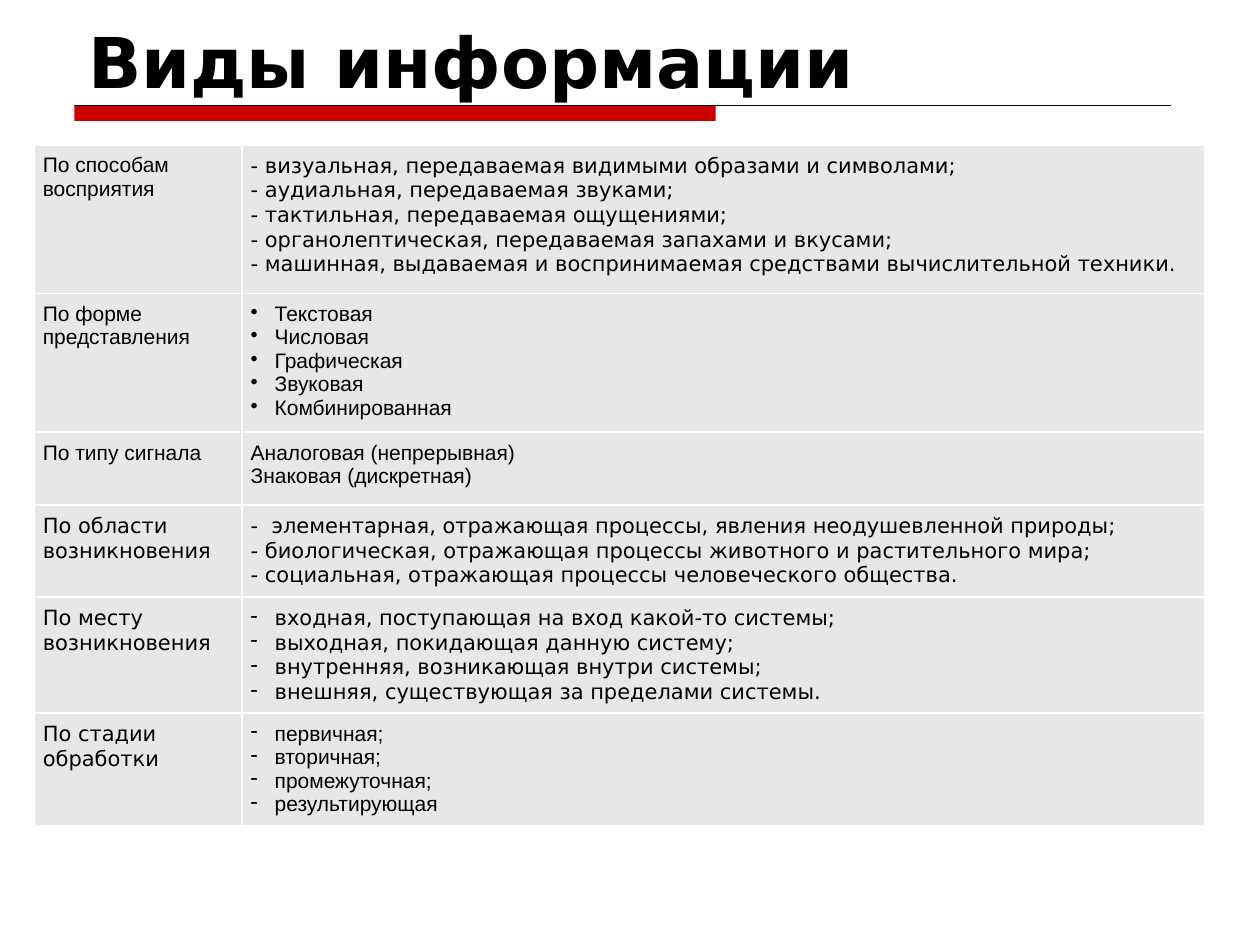
from dataclasses import dataclass

from lxml import etree
from pptx import Presentation
from pptx.dml.color import RGBColor
from pptx.enum.shapes import MSO_CONNECTOR, MSO_SHAPE
from pptx.enum.text import MSO_ANCHOR, MSO_AUTO_SIZE, PP_ALIGN
from pptx.oxml.ns import qn
from pptx.util import Emu, Inches, Pt

RECT = MSO_SHAPE.RECTANGLE
STRAIGHT = MSO_CONNECTOR.STRAIGHT
LEFT = PP_ALIGN.LEFT
TOP, BOTTOM = MSO_ANCHOR.TOP, MSO_ANCHOR.BOTTOM
NO_FIT = MSO_AUTO_SIZE.NONE

COLORS = {"text": "000000", "accent": "CC0000", "cell": "E7E7E7", "border": "FFFFFF"}
SANS, WIDE = "Arial", "DejaVu Sans"
COLS, ROWS = 100, 75  # slide grid
INSET, HANG = Inches(0.07), Inches(0.19)


@dataclass
class Category:
    name: str
    name_font: str
    items: list[str]
    item_font: str
    rows: float  # height in grid rows
    bullet: str = ""


CATEGORIES = [
    Category("По способам восприятия", SANS, [
        "- визуальная, передаваемая видимыми образами и символами;",
        "- аудиальная, передаваемая звуками;",
        "- тактильная, передаваемая ощущениями;",
        "- органолептическая, передаваемая запахами и вкусами;",
        "- машинная, выдаваемая и воспринимаемая средствами вычислительной техники.",
    ], WIDE, 11.8),
    Category("По форме представления", SANS, [
        "Текстовая", "Числовая", "Графическая", "Звуковая", "Комбинированная",
    ], SANS, 11, "•"),
    Category("По типу сигнала", SANS, [
        "Аналоговая (непрерывная)", "Знаковая (дискретная)",
    ], SANS, 5.8),
    Category("По области возникновения", WIDE, [
        "-  элементарная, отражающая процессы, явления неодушевленной природы;",
        "- биологическая, отражающая процессы животного и растительного мира;",
        "- социальная, отражающая процессы человеческого общества.",
    ], WIDE, 7.3),
    Category("По месту возникновения", WIDE, [
        "входная, поступающая на вход какой-то системы;",
        "выходная, покидающая данную систему;",
        "внутренняя, возникающая внутри системы;",
        "внешняя, существующая за пределами системы.",
    ], WIDE, 9.2, "-"),
    Category("По стадии обработки", WIDE, [
        "первичная;", "вторичная;", "промежуточная;", "результирующая",
    ], SANS, 8.9, "-"),
]

prs = Presentation()
prs.slide_width, prs.slide_height = Inches(10), Inches(7.5)
s = prs.slides.add_slide(prs.slide_layouts[5])


def x(cols: float) -> Emu:
    return Emu(round(prs.slide_width * cols / COLS))


def y(rows: float) -> Emu:
    return Emu(round(prs.slide_height * rows / ROWS))


def rgb(name: str) -> RGBColor:
    return RGBColor.from_string(COLORS[name])


def write(tf, lines: list[str], *, font: str, size: float,
          bold: bool = False, bullet: str = "") -> None:
    for i, line in enumerate(lines):
        p = tf.paragraphs[0] if i == 0 else tf.add_paragraph()
        p.alignment = LEFT
        r = p.add_run()
        r.text = line
        r.font.name, r.font.size, r.font.bold = font, Pt(size), bold
        r.font.color.rgb = rgb("text")
        if bullet:
            pPr = p._p.get_or_add_pPr()
            pPr.set("marL", str(HANG))
            pPr.set("indent", str(-HANG))
            etree.SubElement(pPr, qn("a:buChar")).set("char", bullet)


def style_cell(cell) -> None:
    cell.margin_left = cell.margin_right = INSET
    cell.margin_top = cell.margin_bottom = INSET
    cell.vertical_anchor = TOP
    tcPr = cell._tc.get_or_add_tcPr()
    for side in ("a:lnL", "a:lnR", "a:lnT", "a:lnB"):
        ln = etree.SubElement(tcPr, qn(side), w=str(Pt(1)))
        fill = etree.SubElement(ln, qn("a:solidFill"))
        etree.SubElement(fill, qn("a:srgbClr"), val=COLORS["border"])
    cell.fill.solid()
    cell.fill.fore_color.rgb = rgb("cell")


def add_categories(categories: list[Category], left: float, top: float,
                   widths: tuple[float, float]) -> None:
    height = sum(c.rows for c in categories)
    table = s.shapes.add_table(len(categories), len(widths), x(left), y(top),
                               x(sum(widths)), y(height)).table
    table.first_row = table.horz_banding = False
    for col, width in zip(table.columns, widths):
        col.width = x(width)
    for i, c in enumerate(categories):
        table.rows[i].height = y(c.rows)
        name, items = table.cell(i, 0), table.cell(i, 1)
        write(name.text_frame, [c.name], font=c.name_font, size=12)
        write(items.text_frame, c.items, font=c.item_font, size=12, bullet=c.bullet)
        style_cell(name)
        style_cell(items)


# Accent bar and rule under the title
bar = s.shapes.add_shape(RECT, x(5.9), y(8.4), x(50.9), y(1.2))
bar.shadow.inherit = False
bar.fill.solid()
bar.fill.fore_color.rgb = rgb("accent")
bar.line.fill.background()
rule = s.shapes.add_connector(STRAIGHT, x(5.9), y(8.4), x(92.9), y(8.4))
rule.line.color.rgb = rgb("text")
rule.line.width = Pt(0.75)
etree.SubElement(rule._element.spPr, qn("a:effectLst"))

# Title
title = s.shapes.title
title.left, title.top, title.width, title.height = x(6.3), y(3.3), x(87.5), y(5)
tf = title.text_frame
tf.auto_size, tf.word_wrap, tf.vertical_anchor = NO_FIT, True, BOTTOM
tf.margin_left = tf.margin_right = INSET
tf.margin_top = tf.margin_bottom = Inches(0.02)
write(tf, ["Виды информации"], font=WIDE, size=40, bold=True)

# Table of kinds of information
add_categories(CATEGORIES, left=2.7, top=11.5, widths=(16.5, 76.4))

prs.save("out.pptx")
